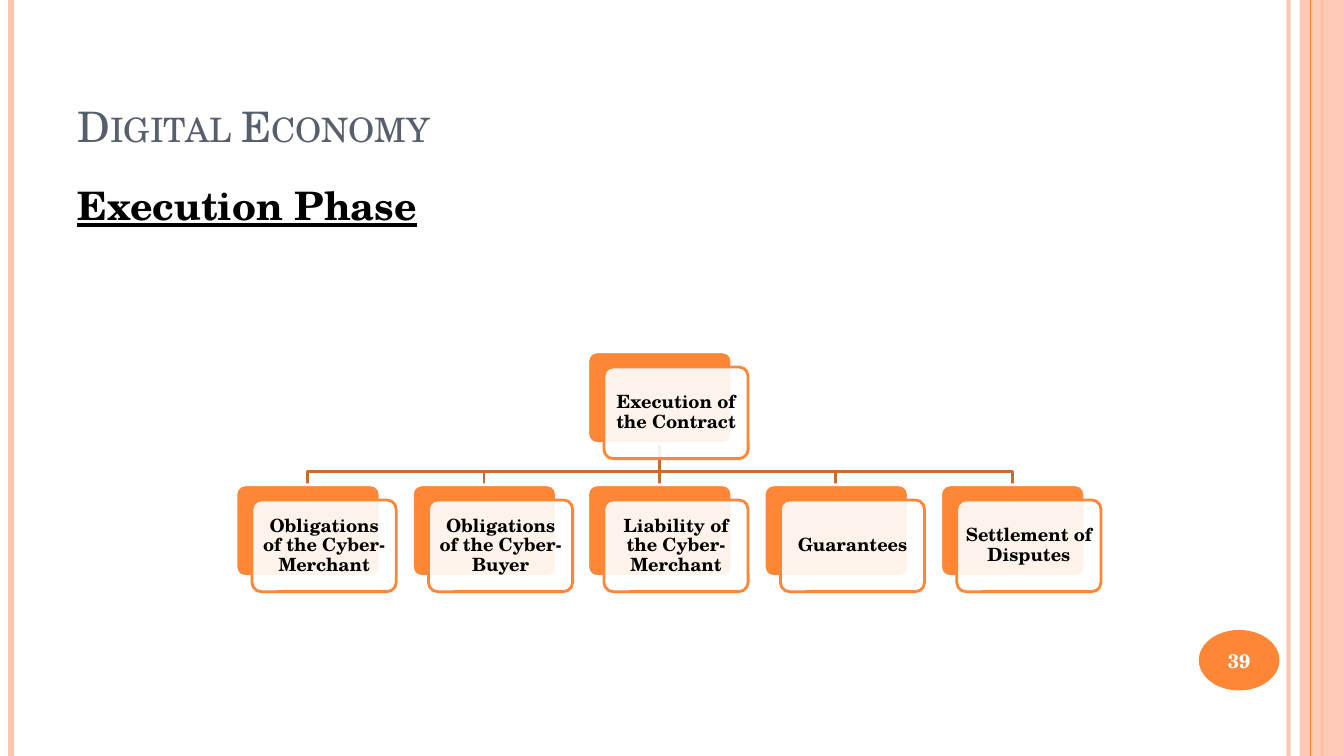
from pptx import Presentation
from pptx import util as u
from pptx.dml.color import RGBColor
from pptx.enum import shapes, text
from pptx.oxml.ns import qn
from lxml import etree

TITLE = "Digital Economy"
HEADING = "Execution Phase"
PAGE = "39"
ROOT = "Execution of the Contract"
BRANCHES = [
    "Obligations of the Cyber-Merchant",
    "Obligations of the Cyber-Buyer",
    "Liability of the Cyber-Merchant",
    "Guarantees",
    "Settlement of Disputes",
]

FONT = "TeX Gyre Schola"
ORANGE = RGBColor(0xFE, 0x86, 0x37)
PEACH = RGBColor(0xFE, 0xC3, 0xAE)
RUST = RGBColor(0xCB, 0x6B, 0x2C)
SLATE = RGBColor(0x57, 0x5F, 0x6D)
WHITE = RGBColor(0xFF, 0xFF, 0xFF)
BLACK = RGBColor(0, 0, 0)

PX = 9144
SLIDE_W, SLIDE_H = 1333, 750
OUTER_RULES = [(1278, PEACH, 3, 93), (11, PEACH, 4.5, 100), (1311, ORANGE, 1.5, 100)]
INNER_RULE = (1300, ORANGE, 0.75, 100)
BAND = (1289, 0, 44, SLIDE_H)
BADGE = (1189, 625, 80, 60)
TITLE_BOX = (67, 30, 1089, 125)
BODY_BOX = (67, 175, 1089, 533)
CARD_W, CARD_H, CARD_SHIFT = 143, 91, (16, 15)
ROOT_Y, BRANCH_X, BRANCH_Y, STEP = 349, 234, 481, 174.7
BEND_Y = 468


def px(*values):
    """Turn px lengths into EMU."""
    return [u.Emu(v * PX) for v in values]


def set_alpha(fill, percent):
    """Make a solid fill partly transparent."""
    color = fill._xPr.find(qn("a:solidFill"))[0]
    etree.SubElement(color, qn("a:alpha")).set("val", str(percent * 1000))


def set_text(sp, words, size, color, bold=True, align=text.PP_ALIGN.CENTER,
             anchor=text.MSO_ANCHOR.MIDDLE):
    """Write one formatted paragraph and return it."""
    tf = sp.text_frame
    tf.text = words
    tf.word_wrap = True
    tf.auto_size = text.MSO_AUTO_SIZE.NONE
    tf.vertical_anchor = anchor
    p = tf.paragraphs[0]
    p.alignment = align
    font = p.runs[0].font
    font.name, font.size, font.bold = FONT, u.Pt(size), bold
    font.color.rgb = color
    return p


def add_line(s, x1, y1, x2, y2, color, width):
    """Add a straight line without shadow."""
    line = s.shapes.add_connector(shapes.MSO_CONNECTOR.STRAIGHT, *px(x1, y1, x2, y2))
    line.line.color.rgb = color
    line.line.width = u.Pt(width)
    etree.SubElement(line._element.spPr, qn("a:effectLst"))
    return line


def add_rule(s, x, color, width, alpha):
    """Add a full-height decorative line."""
    rule = add_line(s, x, 0, x, SLIDE_H, color, width)
    if alpha < 100:
        set_alpha(rule.line.fill, alpha)


def add_box(s, kind, box, fill, line=None):
    """Add a filled preset shape, outlined if a line colour is given."""
    sp = s.shapes.add_shape(kind, *px(*box))
    sp.shadow.inherit = False
    sp.fill.solid()
    sp.fill.fore_color.rgb = fill
    if line is None:
        sp.line.fill.background()
    else:
        sp.line.color.rgb = line
        sp.line.width = u.Pt(2)
    return sp


def add_card(s, x, y, words):
    """Add an orange card with its offset label and return the card."""
    kind = shapes.MSO_SHAPE.ROUNDED_RECTANGLE
    dx, dy = CARD_SHIFT
    card = add_box(s, kind, (x, y, CARD_W, CARD_H), ORANGE, WHITE)
    label = add_box(s, kind, (x + dx, y + dy, CARD_W, CARD_H), WHITE, ORANGE)
    set_alpha(label.fill, 90)
    for sp in (card, label):
        sp.adjustments[0] = 0.1
    tf = label.text_frame
    tf.margin_left = tf.margin_right = tf.margin_top = tf.margin_bottom = px(5)[0]
    set_text(label, words, 13, BLACK).line_spacing = 0.9
    return card


def add_elbow(s, x1, y1, x2, y2):
    """Add a bent branch line."""
    builder = s.shapes.build_freeform(x1, y1, scale=PX)
    builder.add_line_segments([(x1, BEND_Y), (x2, BEND_Y), (x2, y2)], close=False)
    sp = builder.convert_to_shape()
    sp.shadow.inherit = False
    sp.fill.background()
    sp.line.color.rgb = RUST
    sp.line.width = u.Pt(2)


def add_tree(s):
    """Add the root card, its branches and the lines between them."""
    xs = [round(BRANCH_X + i * STEP) for i in range(len(BRANCHES))]
    root_x = xs[len(xs) // 2]
    half = CARD_W // 2
    start = (root_x + half, ROOT_Y + CARD_H)
    for x in xs:
        if x != root_x:
            add_elbow(s, *start, x + half, BRANCH_Y)
    trunk = add_line(s, *start, root_x + half, BRANCH_Y, RUST, 2)
    trunk.begin_connect(add_card(s, root_x, ROOT_Y, ROOT), 2)
    for x, words in zip(xs, BRANCHES):
        card = add_card(s, x, BRANCH_Y, words)
        if x == root_x:
            trunk.end_connect(card, 0)


def main():
    """Build the slide and save it."""
    prs = Presentation()
    prs.slide_width, prs.slide_height = px(SLIDE_W, SLIDE_H)
    s = prs.slides.add_slide(prs.slide_layouts[5])

    for rule in OUTER_RULES:
        add_rule(s, *rule)
    band = add_box(s, shapes.MSO_SHAPE.RECTANGLE, BAND, PEACH)
    set_alpha(band.fill, 87)
    add_rule(s, *INNER_RULE)

    badge = add_box(s, shapes.MSO_SHAPE.OVAL, BADGE, ORANGE)
    set_text(badge, PAGE, 14, WHITE)

    title = s.shapes.title
    title.left, title.top, title.width, title.height = px(*TITLE_BOX)
    p = set_text(title, TITLE, 30, SLATE, False, text.PP_ALIGN.LEFT, text.MSO_ANCHOR.BOTTOM)
    p.runs[0].font._element.set("cap", "small")

    body = s.shapes.add_textbox(*px(*BODY_BOX))
    p = set_text(body, HEADING, 28, BLACK, True, text.PP_ALIGN.LEFT, text.MSO_ANCHOR.TOP)
    p.runs[0].font.underline = True

    add_tree(s)
    prs.save("out.pptx")


if __name__ == "__main__":
    main()
